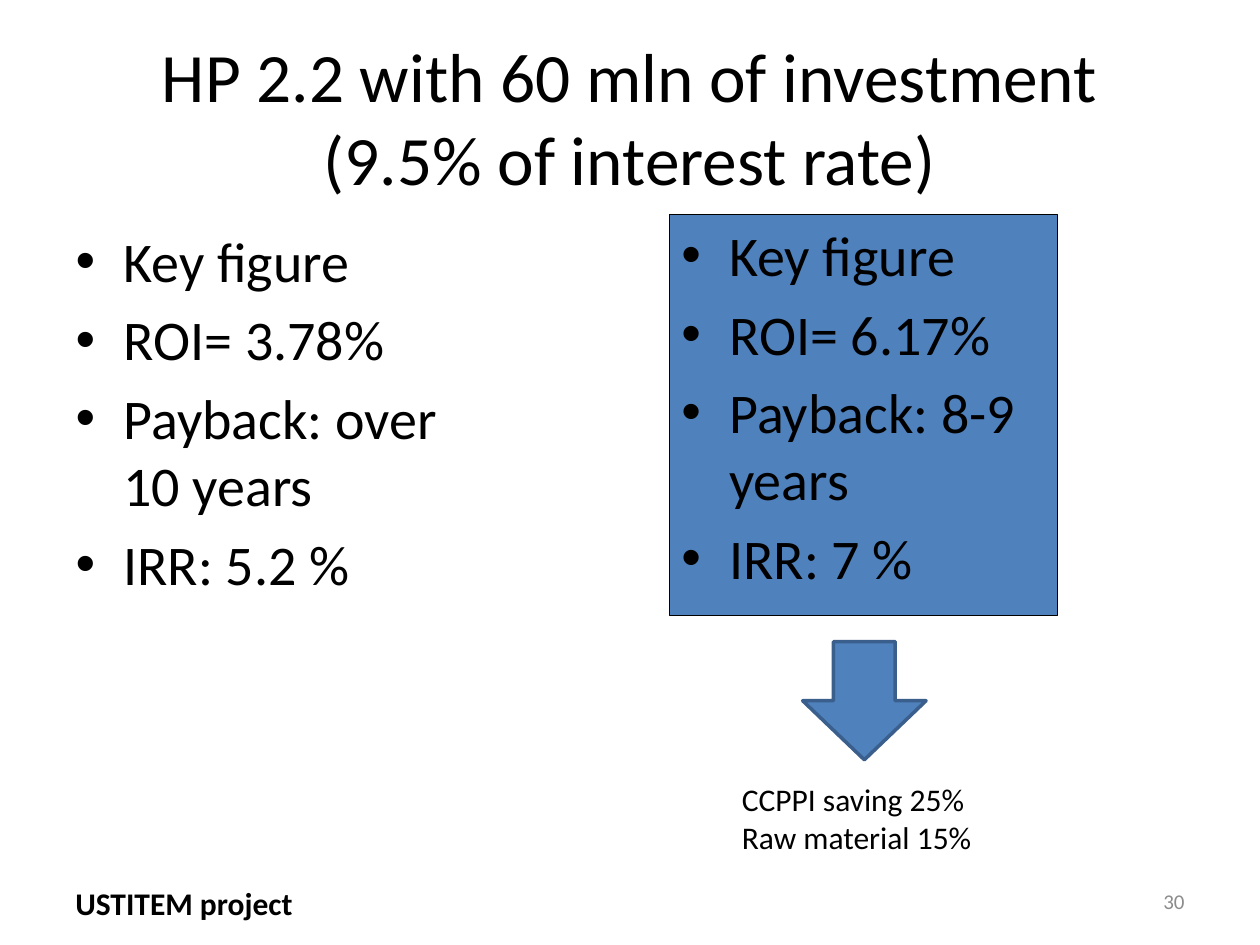
from pptx import Presentation, util as u
from pptx.dml.color import RGBColor
from pptx.enum import shapes, text
from pptx.oxml.ns import qn
from lxml import etree

W, H = u.Inches(10), u.Inches(7.5)
EDGE = 0.05  # side margin, share of the slide width
BLUE = "4F81BD"
LEFT, MID, RIGHT = text.PP_ALIGN.LEFT, text.PP_ALIGN.CENTER, text.PP_ALIGN.RIGHT
TOP, CENTER = text.MSO_ANCHOR.TOP, text.MSO_ANCHOR.MIDDLE


def area(x, y, w, h):
    """Turn shares of the slide's size into left, top, width and height."""
    return [round(v) for v in (x * W, y * H, w * W, h * H)]


def write(shape, lines, size=18, color="000000", bold=False, align=LEFT,
          anchor=TOP, wrap=True, bullet=False):
    frame = shape.text_frame
    frame.text = "\n".join(lines)
    frame.auto_size = text.MSO_AUTO_SIZE.NONE
    frame.word_wrap = wrap
    frame.vertical_anchor = anchor
    for i, para in enumerate(frame.paragraphs):
        if bullet:
            props = para._p.get_or_add_pPr()
            props.set("marL", str(u.Inches(0.38)))
            props.set("indent", str(-u.Inches(0.38)))
            etree.SubElement(props, qn("a:buFont")).set("typeface", "Arial")
            etree.SubElement(props, qn("a:buChar")).set("char", "•")
            para.space_before = u.Pt(0.2 * size if i else 0)
        para.alignment = align
        font = para.font
        font.name, font.size, font.bold = "Calibri", u.Pt(size), bold
        font.color.rgb = RGBColor.from_string(color)


deck = Presentation()
deck.slide_width, deck.slide_height = W, H
slide = deck.slides.add_slide(deck.slide_layouts[1])
items = slide.shapes

# Title and the two sets of key figures
title, body = items.title, slide.placeholders[1]
title.left, title.top, title.width, title.height = area(EDGE, 0.04, 0.9, 0.167)
write(title, ["HP 2.2 with 60 mln of investment (9.5% of interest rate)"],
      size=39.6, align=MID, anchor=CENTER)

body.left, body.top, body.width, body.height = area(EDGE, 0.233, 0.308, 0.424)
panel = items.add_shape(shapes.MSO_SHAPE.RECTANGLE,
                        *area(0.531, 0.227, 0.308, 0.424))
cases = [(body, "3.78%", "over 10 years", "5.2 %"),
         (panel, "6.17%", "8-9 years", "7 %")]
for box, roi, payback, irr in cases:
    write(box, ["Key figure", f"ROI= {roi}", f"Payback: {payback}", f"IRR: {irr}"],
          size=32, bullet=True)

# Arrow from the panel down to its assumptions
arrow = items.add_shape(shapes.MSO_SHAPE.DOWN_ARROW,
                        *area(0.637, 0.679, 0.098, 0.125))
for shape, edge, width in [(panel, "000000", 0.5), (arrow, "3A5F8C", 2)]:
    shape.shadow.inherit = False
    shape.fill.solid()
    shape.fill.fore_color.rgb = RGBColor.from_string(BLUE)
    shape.line.color.rgb = RGBColor.from_string(edge)
    shape.line.width = u.Pt(width)

note = items.add_textbox(*area(0.579, 0.819, 0.204, 0.095))
write(note, ["CCPPI saving 25%", "Raw material 15%"], wrap=False)

# Footer
project = items.add_textbox(*area(EDGE, 0.929, 0.2, 0.053))
write(project, ["USTITEM project"], bold=True, wrap=False)
number = items.add_textbox(*area(0.717, 0.927, 0.233, 0.053))
write(number, ["30"], size=12, color="8C8C8C", align=RIGHT, anchor=CENTER)

deck.save("out.pptx")
